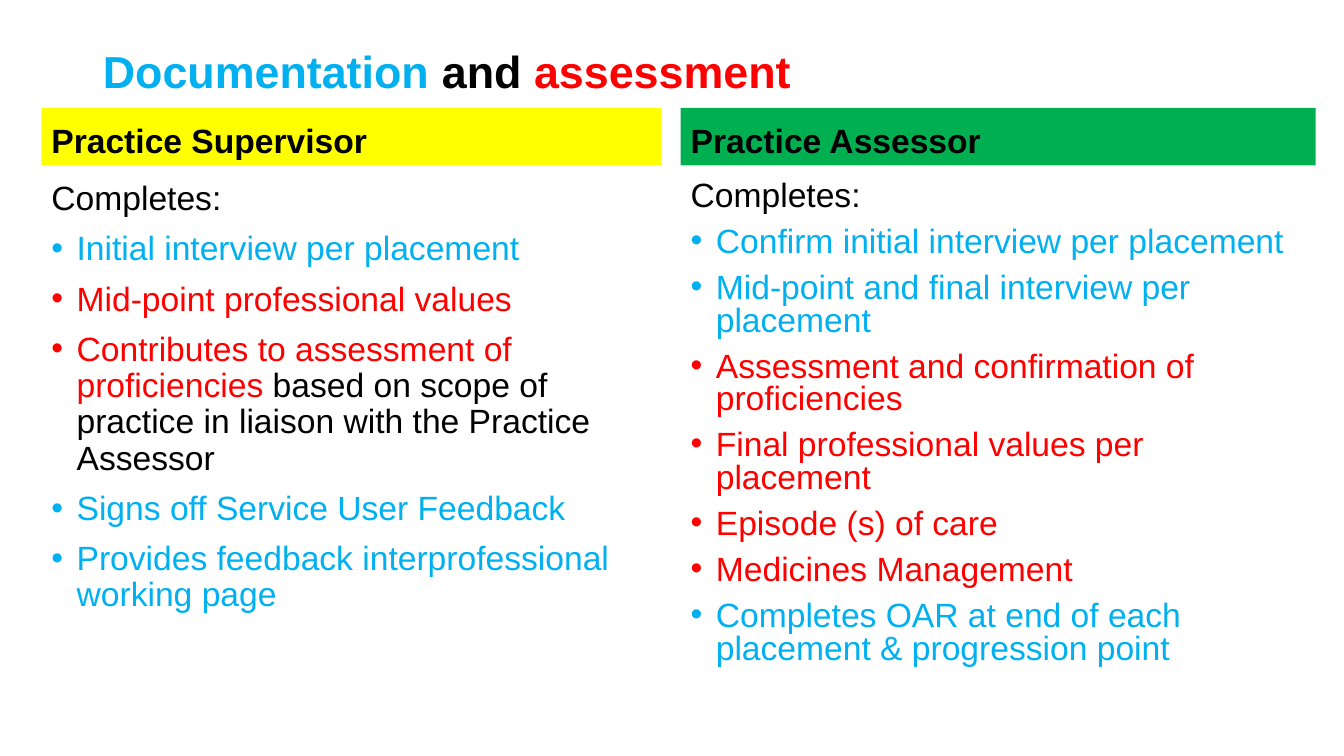
from lxml import etree
from pptx import Presentation
from pptx.dml.color import RGBColor
from pptx.enum import text
from pptx.oxml import ns
from pptx.util import Inches, Pt

BLACK = RGBColor(0x00, 0x00, 0x00)
BLUE = RGBColor(0x00, 0xB0, 0xF0)
RED = RGBColor(0xFF, 0x00, 0x00)
YELLOW = RGBColor(0xFF, 0xFF, 0x00)
GREEN = RGBColor(0x00, 0xB0, 0x50)

SUPERVISOR_TASKS = [
    [("Initial interview per placement", BLUE)],
    [("Mid-point professional values", RED)],
    [("Contributes to assessment of proficiencies ", RED),
     ("based on scope of practice in liaison with the Practice Assessor", BLACK)],
    [("Signs off Service User Feedback", BLUE)],
    [("Provides feedback interprofessional working page", BLUE)],
]
ASSESSOR_TASKS = [
    [("Confirm initial interview per placement", BLUE)],
    [("Mid-point and final interview per placement", BLUE)],
    [("Assessment and confirmation of proficiencies", RED)],
    [("Final professional values per placement", RED)],
    [("Episode (s) of care", RED)],
    [("Medicines Management", RED)],
    [("Completes OAR at end of each placement & progression point", BLUE)],
]


class ComparisonPage:
    font = "Arial"
    title_size = Pt(32)
    body_size = Pt(24)
    indent = Inches(0.25)
    gap = Pt(10)

    def __init__(self, deck):
        self.page = deck.slides.add_slide(deck.slide_layouts[4])

    def place(self, index, left, top, width, height, anchor):
        box = self.page.placeholders[index]
        box.left, box.top = Inches(left), Inches(top)
        box.width, box.height = Inches(width), Inches(height)
        frame = box.text_frame
        frame.word_wrap = True
        frame.auto_size = text.MSO_AUTO_SIZE.NONE
        frame.vertical_anchor = anchor
        return box

    def add_spans(self, para, parts, size, bold=False, spacing=0.9):
        para.alignment = text.PP_ALIGN.LEFT
        para.line_spacing = spacing
        para.space_before = Pt(0)
        for words, color in parts:
            span = para.add_run()
            span.text = words
            span.font.name = self.font
            span.font.size = size
            span.font.bold = bold
            span.font.color.rgb = color

    def set_bullet(self, para, bulleted):
        props = para._p.get_or_add_pPr()
        indent = self.indent if bulleted else 0
        props.set("marL", str(indent))
        props.set("indent", str(-indent))
        if bulleted:
            etree.SubElement(props, ns.qn("a:buFont")).set("typeface", self.font)
            etree.SubElement(props, ns.qn("a:buChar")).set("char", "•")
        else:
            etree.SubElement(props, ns.qn("a:buNone"))

    def title(self, parts):
        box = self.place(0, 0.92, 0.4, 11.5, 0.67, text.MSO_ANCHOR.MIDDLE)
        self.add_spans(box.text_frame.paragraphs[0], parts, self.title_size, bold=True)

    def heading(self, index, left, width, words, fill):
        box = self.place(index, left, 1.07, width, 0.57, text.MSO_ANCHOR.BOTTOM)
        box.fill.solid()
        box.fill.fore_color.rgb = fill
        para = box.text_frame.paragraphs[0]
        self.set_bullet(para, False)
        self.add_spans(para, [(words, BLACK)], self.body_size, bold=True)

    def tasks(self, index, left, width, items, spacing):
        box = self.place(index, left, 1.75, width, 5.02, text.MSO_ANCHOR.TOP)
        intro = box.text_frame.paragraphs[0]
        self.set_bullet(intro, False)
        self.add_spans(intro, [("Completes:", BLACK)], self.body_size, spacing=spacing)
        for parts in items:
            para = box.text_frame.add_paragraph()
            self.set_bullet(para, True)
            self.add_spans(para, parts, self.body_size, spacing=spacing)
            para.space_before = self.gap


def main():
    deck = Presentation()
    deck.slide_width, deck.slide_height = Inches(13.33), Inches(7.5)
    slide = ComparisonPage(deck)
    slide.title([("Documentation ", BLUE), ("and", BLACK), (" assessment", RED)])
    slide.heading(1, 0.41, 6.15, "Practice Supervisor", YELLOW)
    slide.tasks(2, 0.41, 6.15, SUPERVISOR_TASKS, spacing=0.9)
    slide.heading(3, 6.75, 6.3, "Practice Assessor", GREEN)
    slide.tasks(4, 6.75, 6.3, ASSESSOR_TASKS, spacing=0.8)
    deck.save("out.pptx")


if __name__ == "__main__":
    main()
